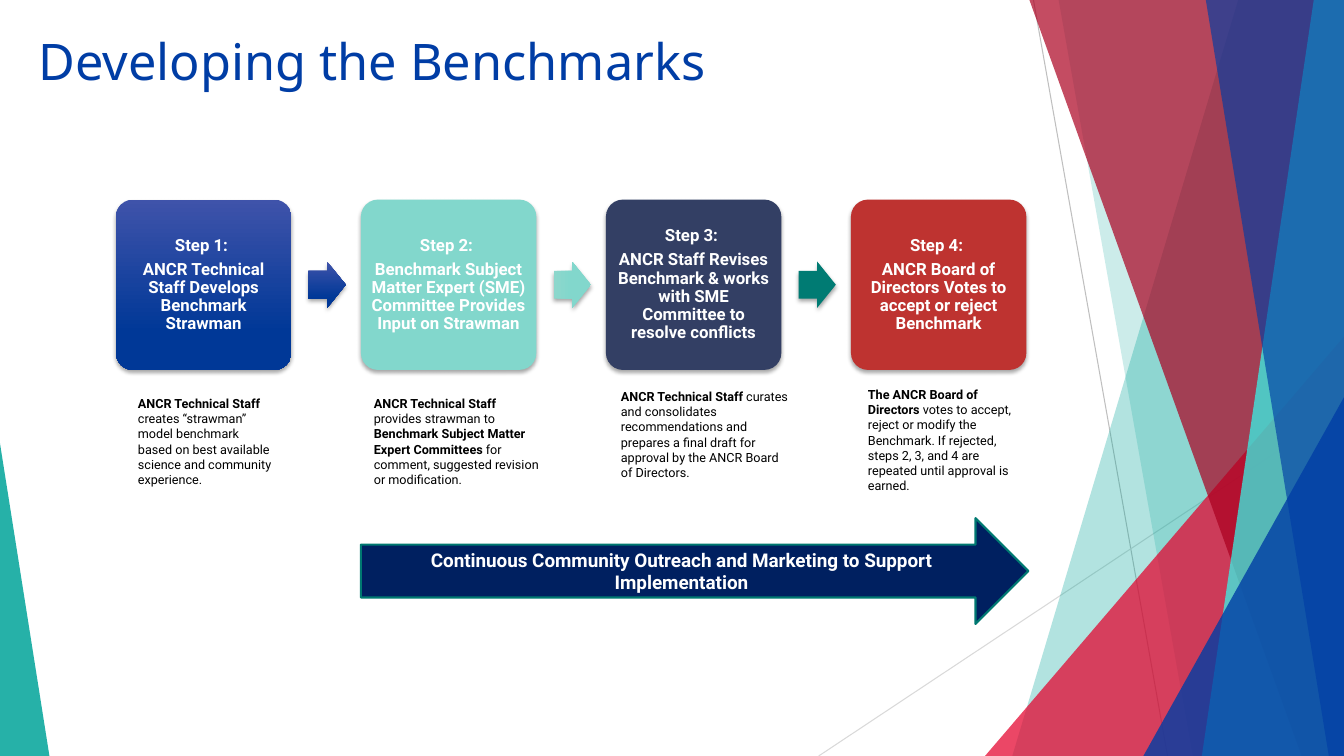
from pptx import Presentation
from pptx.util import Inches, Pt
from pptx.dml.color import RGBColor
from pptx.enum.shapes import MSO_SHAPE as SHP, MSO_CONNECTOR
from pptx.enum.text import MSO_ANCHOR, MSO_AUTO_SIZE, PP_ALIGN
from pptx.oxml import parse_xml
from pptx.oxml.ns import nsdecls, qn
from lxml.etree import SubElement

W, H = 13.33, 7.5
TITLE = "Developing the Benchmarks"
OUTREACH = "Continuous Community Outreach and Marketing to Support Implementation"
BLUE = ("3F53AA", "003897", 0.78, 270)
MINT = ("8CD7CC", "82D7CC", 0.5, 0)

STEPS = [
    {"name": "Step 1: ", "text": "ANCR Technical Staff Develops Benchmark Strawman",
     "fill": BLUE, "arrow": BLUE, "at": (1.27, 3.88, 1.54, 1.45),
     "caption": [("ANCR Technical Staff ", True),
                 ("creates “strawman” model benchmark based on best available "
                  "science and community experience.", False)]},
    {"name": "Step 2: ", "text": "Benchmark Subject Matter Expert (SME) Committee "
                                 "Provides Input on Strawman",
     "fill": "82D7CC", "arrow": MINT, "at": (3.61, 3.88, 1.86, 1.26),
     "caption": [("ANCR Technical Staff ", True), ("provides strawman to", False),
                 (" Benchmark Subject Matter Expert Committees ", True),
                 ("for comment, suggested revision or modification.", False)]},
    {"name": "Step 3: ", "text": "ANCR Staff Revises Benchmark & works with SME "
                                 "Committee to resolve conflicts",
     "fill": "333F64", "arrow": "007B73", "at": (6.06, 3.81, 1.86, 1.26),
     "caption": [("ANCR Technical Staff ", True),
                 ("curates and consolidates recommendations and prepares a final "
                  "draft for approval by the ANCR Board of Directors.", False)]},
    {"name": "Step 4: ", "text": "ANCR Board of Directors Votes to accept or reject Benchmark",
     "fill": "BE3330", "arrow": None, "at": (8.51, 3.79, 1.69, 1.45),
     "caption": [("The ANCR Board of Directors ", True),
                 ("votes to accept, reject or modify the Benchmark. If rejected, "
                  "steps 2, 3, and 4 are repeated until approval is earned.", False)]},
]

RAYS = [((10.25, 0), (11.58, H), "BFBFBF"), ((W, 4.04), (8.12, H), "D9D9D9")]
BANDS = [
    ("band", (12.28, 10.04), "00A499", 30),
    ("band", (10.5, 11.83), "00A499", 20),
    ("triangle", (9.77, 3.34, 3.56, 1), "E4002B", 72),
    ("band", (10.21, 12.91), "AB0020", 70),
    ("band", (13.03, 11.92), "2FFFF1", 70),
    ("band", (11.96, 13.18), "003DA5", 65),
    ("triangle", (11.34, 3.94, 1.99, 1), "003DA5", 80),
    ("triangle", (0, 4.4, 0.49, 0), "00A499", 85),
]

THEME = {"title_font": "Noto Sans", "font": "Roboto", "title": "003DA5",
         "ink": "000000", "light": "FFFFFF", "outreach": "002060", "edge": "007971",
         "title_size": 36, "step_size": 12, "caption_size": 9, "outreach_size": 13.5}

BOX_X, BOX_Y, BOX_W, BOX_H, PITCH = 1.15, 1.98, 1.74, 1.69, 2.43
ARROW_W, ARROW_H, ARROW_DX = 0.37, 0.46, 1.91


def rgb(value):
    return RGBColor.from_string(value)


def paint(sp, fill, alpha=None):
    sp.shadow.inherit = False
    sp.line.fill.background()
    if isinstance(fill, tuple):
        first, last, stop, angle = fill
        sp.fill.gradient()
        sp.fill.gradient_angle = angle
        for gs, color, pos in zip(sp.fill.gradient_stops, (first, last), (0, stop)):
            gs.color.rgb = rgb(color)
            gs.position = pos
    else:
        sp.fill.solid()
        sp.fill.fore_color.rgb = rgb(fill)
    if alpha:
        color = sp.fill._xPr.find(qn("a:solidFill"))[0]
        SubElement(color, qn("a:alpha"), val=str(alpha * 1000))


def drop_shadow(sp):
    sp._element.spPr.find(qn("a:effectLst")).append(parse_xml(
        f'<a:outerShdw {nsdecls("a")} blurRad="{Pt(3)}" dist="{Pt(2)}" dir="5400000" '
        'rotWithShape="0"><a:srgbClr val="000000"><a:alpha val="35000"/></a:srgbClr>'
        '</a:outerShdw>'))


def add_run(p, text, size, color, bold=False, font=THEME["font"]):
    r = p.add_run()
    r.text = text
    r.font.name, r.font.size, r.font.bold = font, Pt(size), bold
    r.font.color.rgb = rgb(color)


def add_preset(shapes, kind, at, fill, adjust, alpha=None):
    sp = shapes.add_shape(kind, *map(Inches, at))
    for i, value in enumerate(adjust):
        sp.adjustments[i] = value
    paint(sp, fill, alpha)
    return sp


def add_backdrop(shapes):
    for start, end, color in RAYS:
        ray = shapes.add_connector(MSO_CONNECTOR.STRAIGHT, *map(Inches, start + end))
        ray.line.color.rgb = rgb(color)
        ray.line.width = Pt(0.75)
        SubElement(ray._element.spPr, qn("a:effectLst"))
    for kind, geometry, color, alpha in BANDS:
        if kind == "band":
            top, bottom = geometry
            points = [(Inches(x), Inches(y)) for x, y in
                      ((top, 0), (W, 0), (W, H), (bottom, H))]
            builder = shapes.build_freeform(*points[0])
            builder.add_line_segments(points[1:])
            paint(builder.convert_to_shape(), color, alpha)
        else:
            x, y, width, apex = geometry
            add_preset(shapes, SHP.ISOSCELES_TRIANGLE, (x, y, width, H - y),
                       color, [apex], alpha)


def add_step(shapes, i, step):
    x = BOX_X + i * PITCH
    box = add_preset(shapes, SHP.ROUNDED_RECTANGLE, (x, BOX_Y, BOX_W, BOX_H),
                     step["fill"], [0.1])
    drop_shadow(box)
    tf = box.text_frame
    tf.word_wrap, tf.vertical_anchor = True, MSO_ANCHOR.MIDDLE
    tf.margin_left = tf.margin_right = tf.margin_top = tf.margin_bottom = Inches(0.04)
    for p, text in ((tf.paragraphs[0], step["name"]), (tf.add_paragraph(), step["text"])):
        p.alignment, p.line_spacing, p.space_after = PP_ALIGN.CENTER, 0.9, Pt(4.2)
        add_run(p, text, THEME["step_size"], THEME["light"], True)
    if step["arrow"]:
        y = BOX_Y + (BOX_H - ARROW_H) / 2
        drop_shadow(add_preset(shapes, SHP.RIGHT_ARROW, (x + ARROW_DX, y, ARROW_W, ARROW_H),
                               step["arrow"], [0.6, 0.5]))
    tf = shapes.add_textbox(*map(Inches, step["at"])).text_frame
    tf.word_wrap, tf.auto_size = True, MSO_AUTO_SIZE.SHAPE_TO_FIT_TEXT
    for text, bold in step["caption"]:
        add_run(tf.paragraphs[0], text, THEME["caption_size"], THEME["ink"], bold)


def add_outreach(shapes):
    sp = add_preset(shapes, SHP.RIGHT_ARROW, (3.58, 5.14, 6.62, 1.05),
                    THEME["outreach"], [0.5, 0.5])
    sp.line.color.rgb = rgb(THEME["edge"])
    sp.line.width = Pt(1.5)
    tf = sp.text_frame
    tf.word_wrap, tf.vertical_anchor = True, MSO_ANCHOR.MIDDLE
    tf.paragraphs[0].alignment = PP_ALIGN.CENTER
    add_run(tf.paragraphs[0], OUTREACH, THEME["outreach_size"], THEME["light"], True)


def main():
    prs = Presentation()
    prs.slide_width, prs.slide_height = Inches(W), Inches(H)
    s = prs.slides.add_slide(prs.slide_layouts[5])
    title = s.shapes.title
    title.left, title.top, title.width, title.height = map(Inches, (0.28, 0.25, 9.4, 1.44))
    tf = title.text_frame
    tf.vertical_anchor, tf.auto_size = MSO_ANCHOR.TOP, MSO_AUTO_SIZE.NONE
    tf.paragraphs[0].alignment = PP_ALIGN.LEFT
    add_run(tf.paragraphs[0], TITLE, THEME["title_size"], THEME["title"],
            font=THEME["title_font"])
    add_backdrop(s.shapes)
    for i, step in enumerate(STEPS):
        add_step(s.shapes, i, step)
    add_outreach(s.shapes)
    prs.save("out.pptx")


if __name__ == "__main__":
    main()
